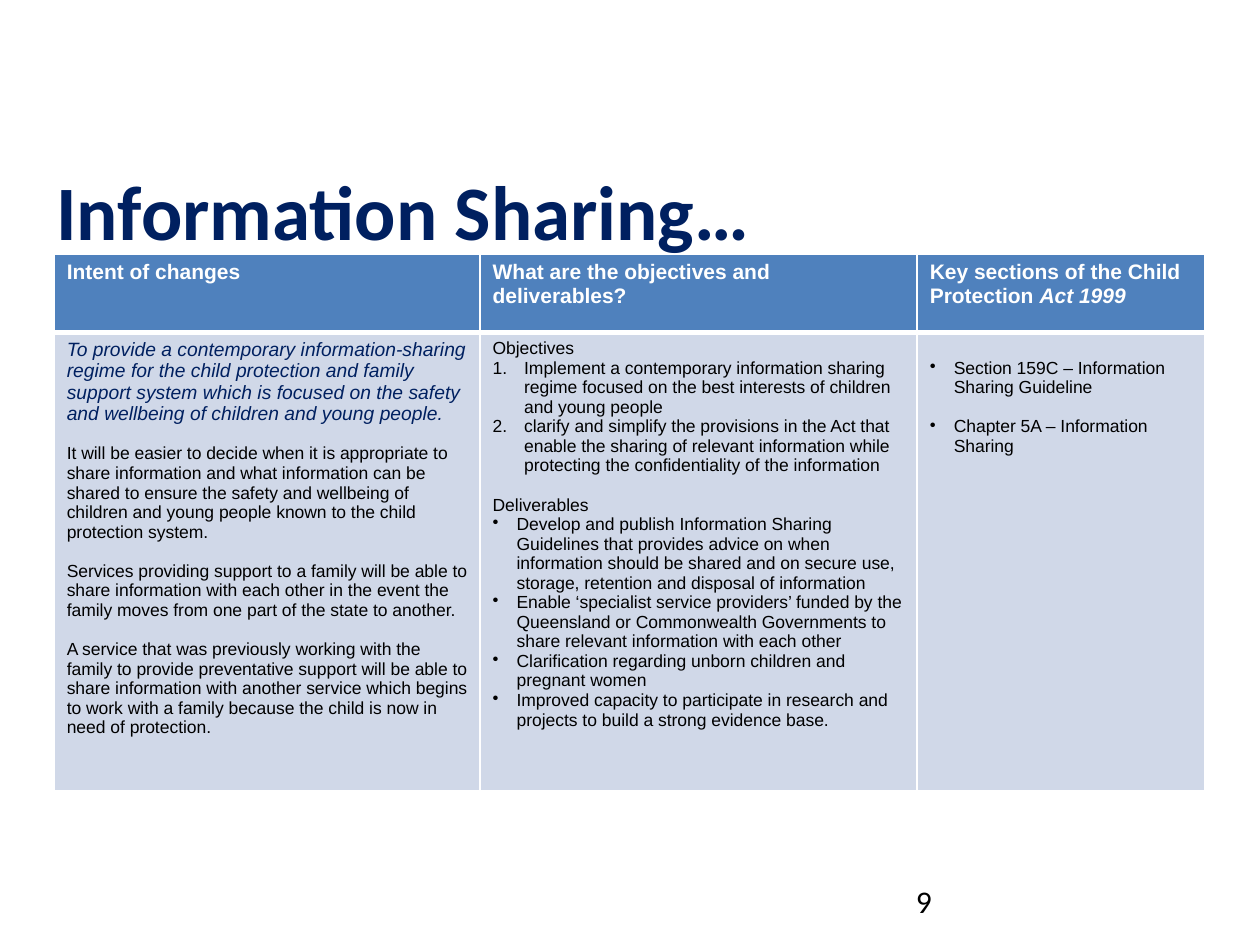
from dataclasses import dataclass

from lxml import etree
from pptx import Presentation
from pptx import util as u
from pptx.dml.color import RGBColor
from pptx.enum import text
from pptx.oxml import ns


@dataclass(frozen=True)
class Theme:
    navy: str = "002060"
    blue: str = "4F81BD"
    pale: str = "D0D8E8"
    white: str = "FFFFFF"
    black: str = "000000"
    heading_font: str = "Calibri"
    body_font: str = "Arial"
    title: float = 44
    number: float = 18
    header: float = 12
    intro: float = 11
    body: float = 10
    gap: float = 11.2


THEME = Theme()
NUMBER = ("buAutoNum", {"type": "arabicPeriod"})
BULLET = ("buChar", {"char": "•"})

HEADERS = [
    [("Intent of changes", False)],
    [("What are the objectives and deliverables?", False)],
    [("Key sections of the Child Protection ", False), ("Act 1999", True)],
]
INTENT = [
    ("To provide a contemporary information-sharing regime for the child protection and family support system which is focused on the safety and wellbeing of children and young people.",
     dict(size=THEME.intro, color=THEME.navy, italic=True)),
    ("It will be easier to decide when it is appropriate to share information and what information can be shared to ensure the safety and wellbeing of children and young people known to the child protection system.",
     dict(before=THEME.gap)),
    ("Services providing support to a family will be able to share information with each other in the event the family moves from one part of the state to another.",
     dict(before=THEME.gap)),
    ("A service that was previously working with the family to provide preventative support will be able to share information with another service which begins to work with a family because the child is now in need of protection.",
     dict(before=THEME.gap)),
]
NUMBERED = dict(marker=NUMBER, indent=0.25)
BULLETED = dict(marker=BULLET, indent=0.19)
OBJECTIVES = [
    ("Objectives", {}),
    ("Implement a contemporary information sharing regime focused on the best interests of children and young people", NUMBERED),
    ("clarify and simplify the provisions in the Act that enable the sharing of relevant information while protecting the confidentiality of the information", NUMBERED),
    ("Deliverables", dict(before=THEME.gap)),
    ("Develop and publish Information Sharing Guidelines that provides advice on when information should be shared and on secure use, storage, retention and disposal of information", BULLETED),
    ("Enable ‘specialist service providers’ funded by the Queensland or Commonwealth Governments to share relevant information with each other", BULLETED),
    ("Clarification regarding unborn children and pregnant women", BULLETED),
    ("Improved capacity to participate in research and projects to build a strong evidence base.", BULLETED),
]
SECTIONS = [
    ("Section 159C – Information Sharing Guideline", BULLETED),
    ("Chapter 5A – Information Sharing", dict(BULLETED, before=THEME.gap)),
]


def write(para, words, size=THEME.body, color=THEME.black, font=THEME.body_font,
          bold=False, italic=False, before=0, marker=None, indent=0):
    if marker:
        tag, values = marker
        properties = para._p.get_or_add_pPr()
        properties.set("marL", str(u.Inches(indent)))
        properties.set("indent", str(-u.Inches(indent)))
        etree.SubElement(properties, ns.qn("a:" + tag), values)
    if before:
        para.space_before = u.Pt(before)
    span = para.add_run()
    span.text = words
    span.font.size = u.Pt(size)
    span.font.name = font
    span.font.bold = bold
    span.font.italic = italic
    span.font.color.rgb = RGBColor.from_string(color)


def add_label(page, box, words, anchor=text.MSO_ANCHOR.TOP, **style):
    frame = page.shapes.add_textbox(*map(u.Inches, box)).text_frame
    frame.word_wrap = True
    frame.vertical_anchor = anchor
    write(frame.paragraphs[0], words, font=THEME.heading_font, **style)


def style_cell(cell, fill, top, bottom):
    properties = cell._tc.get_or_add_tcPr()
    for side, width in (("L", 1), ("R", 1), ("T", top), ("B", bottom)):
        line = etree.SubElement(properties, ns.qn("a:ln" + side), w=str(u.Pt(width)))
        paint = etree.SubElement(line, ns.qn("a:solidFill"))
        etree.SubElement(paint, ns.qn("a:srgbClr"), val=THEME.white)
    cell.fill.solid()
    cell.fill.fore_color.rgb = RGBColor.from_string(fill)


def add_changes_table(page, box):
    table = page.shapes.add_table(2, 3, *map(u.Inches, box)).table
    for column, width in zip(table.columns, (3.38, 3.47, 2.28)):
        column.width = u.Inches(width)
    for row, height in zip(table.rows, (0.62, box[3] - 0.62)):
        row.height = u.Inches(height)
    for index, (header, body) in enumerate(zip(HEADERS, (INTENT, OBJECTIVES, SECTIONS))):
        cell = table.cell(0, index)
        style_cell(cell, THEME.blue, 1, 3)
        for words, italic in header:
            write(cell.text_frame.paragraphs[0], words, size=THEME.header,
                  color=THEME.white, bold=True, italic=italic)
        cell = table.cell(1, index)
        style_cell(cell, THEME.pale, 3, 1)
        frame = cell.text_frame
        for order, (words, style) in enumerate(body):
            para = frame.add_paragraph() if order else frame.paragraphs[0]
            write(para, words, **style)
    table.cell(1, 2).margin_top = u.Inches(0.05) + u.Pt(THEME.gap)


def main():
    deck = Presentation()
    deck.slide_width, deck.slide_height = u.Inches(10), u.Inches(7.5)
    page = deck.slides.add_slide(deck.slide_layouts[6])
    add_label(page, (0.35, 1.23, 9.13, 0.87), "Information Sharing…",
              anchor=text.MSO_ANCHOR.MIDDLE, size=THEME.title, color=THEME.navy, bold=True)
    add_changes_table(page, (0.43, 2.02, 9.13, 4.26))
    add_label(page, (7.17, 6.95, 2.33, 0.4), "9", size=THEME.number)
    deck.save("out.pptx")


if __name__ == "__main__":
    main()
